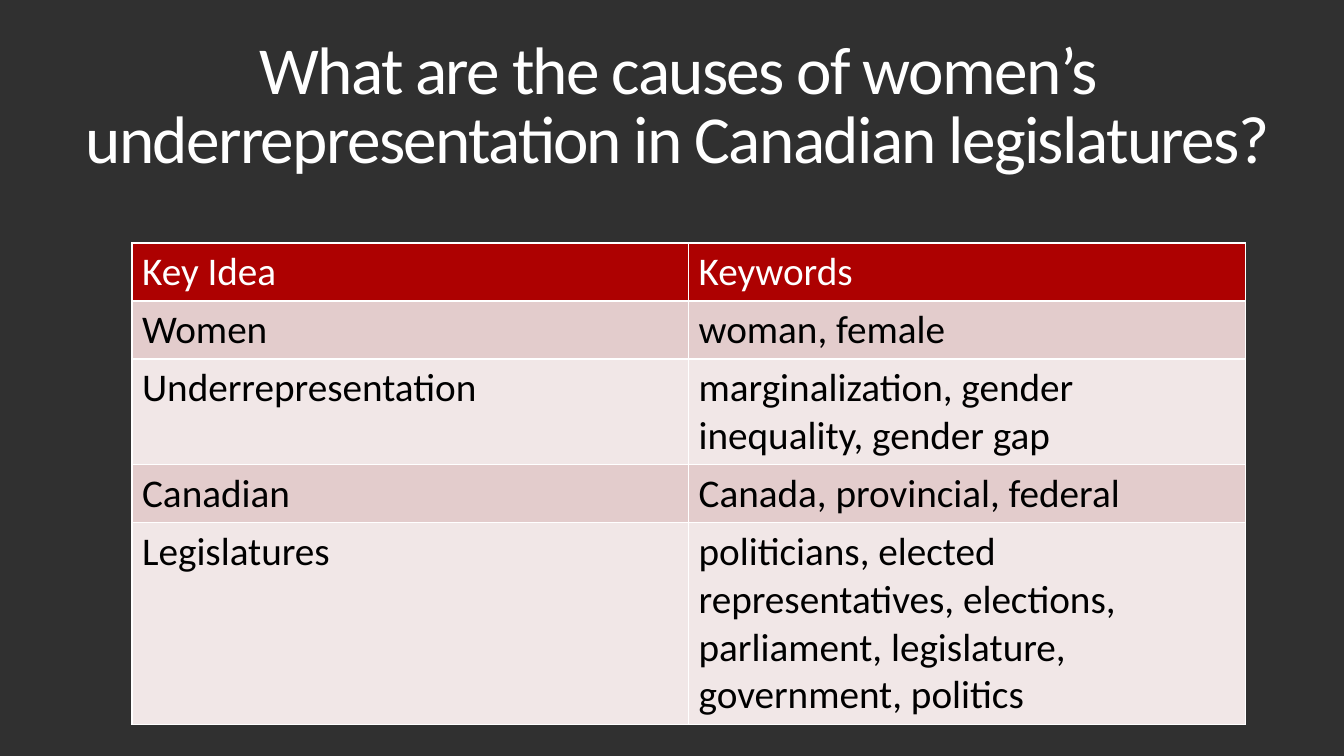
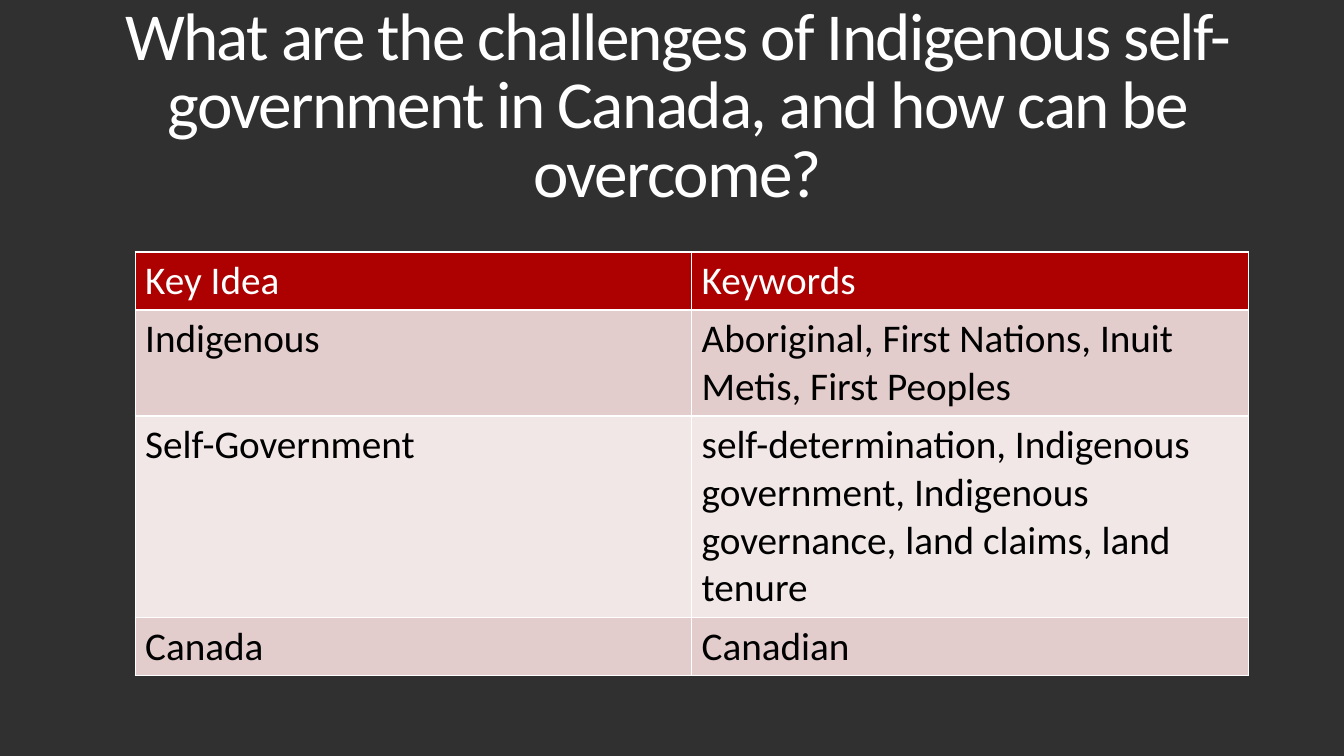
from lxml import etree
from pptx import Presentation
from pptx import util as u
from pptx.dml.color import RGBColor
from pptx.enum import text
from pptx.oxml import ns

BACKGROUND = RGBColor(0x30, 0x30, 0x30)
WHITE = RGBColor(0xFF, 0xFF, 0xFF)
BLACK = RGBColor(0x00, 0x00, 0x00)
RED = RGBColor(0xAD, 0x01, 0x01)
BANDS = (RGBColor(0xE3, 0xCC, 0xCC), RGBColor(0xF1, 0xE7, 0xE7))

FONT = "Calibri"
TITLE_SIZE, TITLE_SPACING = 48, -120
TABLE_SIZE = 28
COLUMN_WIDTH = u.Inches(5.52)
LINE_HEIGHT = u.Inches(0.47)
ROW_PADDING = u.Inches(0.1)
HEADER = ("Key Idea", "Keywords", 1)

TOPICS = (
    (
        "What are the causes of women’s underrepresentation in Canadian legislatures?",
        (1.31, 2.41),
        (
            ("Women", "woman, female", 1),
            ("Underrepresentation", "marginalization, gender inequality, gender gap", 2),
            ("Canadian", "Canada, provincial, federal", 1),
            (
                "Legislatures",
                "politicians, elected representatives, elections, parliament, "
                "legislature, government, politics",
                4,
            ),
        ),
    ),
    (
        "What are the challenges of Indigenous self-government in Canada, "
        "and how can be overcome?",
        (1.34, 2.5),
        (
            ("Indigenous", "Aboriginal, First Nations, Inuit Metis, First Peoples", 2),
            (
                "Self-Government",
                "self-determination, Indigenous government, Indigenous governance, "
                "land claims, land tenure",
                4,
            ),
            ("Canada", "Canadian", 1),
        ),
    ),
)


def add_span(para, words, size, color):
    span = para.add_run()
    span.text = words
    span.font.name = FONT
    span.font.size = u.Pt(size)
    span.font.bold = False
    span.font.color.rgb = color
    return span


def prepare_layout(deck):
    fill = deck.slide_master.background.fill
    fill.solid()
    fill.fore_color.rgb = BACKGROUND
    layout = deck.slide_layouts.get_by_name("Title Only")
    title = layout.placeholders[0]
    title.left, title.top = u.Inches(0.17), u.Inches(0.31)
    title.width, title.height = u.Inches(13.1), u.Inches(1.53)
    return layout


def write_title(page, words):
    frame = page.shapes.title.text_frame
    frame.word_wrap = True
    frame.auto_size = text.MSO_AUTO_SIZE.NONE
    frame.vertical_anchor = text.MSO_ANCHOR.MIDDLE
    para = frame.paragraphs[0]
    para.alignment = text.PP_ALIGN.CENTER
    para.line_spacing = 0.85
    span = add_span(para, words, TITLE_SIZE, WHITE)
    span.font._element.set("spc", str(TITLE_SPACING))


def add_borders(cell):
    properties = cell._tc.get_or_add_tcPr()
    for position, side in enumerate(("lnL", "lnR", "lnT", "lnB")):
        line = etree.Element(ns.qn(f"a:{side}"), w=str(u.Pt(1)))
        fill = etree.SubElement(line, ns.qn("a:solidFill"))
        etree.SubElement(fill, ns.qn("a:srgbClr"), val=str(WHITE))
        properties.insert(position, line)


def write_cell(cell, words, fill, color):
    cell.fill.solid()
    cell.fill.fore_color.rgb = fill
    add_span(cell.text_frame.paragraphs[0], words, TABLE_SIZE, color)
    add_borders(cell)


def add_keyword_table(page, corner, topics):
    rows = (HEADER, *topics)
    heights = [ROW_PADDING + lines * LINE_HEIGHT for *_, lines in rows]
    left, top = map(u.Inches, corner)
    table = page.shapes.add_table(
        len(rows), 2, left, top, 2 * COLUMN_WIDTH, sum(heights)
    ).table
    for column in table.columns:
        column.width = COLUMN_WIDTH
    for index, (*entries, _) in enumerate(rows):
        table.rows[index].height = heights[index]
        fill, color = (BANDS[(index - 1) % 2], BLACK) if index else (RED, WHITE)
        for cell, words in zip(table.rows[index].cells, entries):
            write_cell(cell, words, fill, color)


def main():
    deck = Presentation()
    deck.slide_width, deck.slide_height = u.Inches(13.33), u.Inches(7.5)
    layout = prepare_layout(deck)
    for question, corner, topics in TOPICS:
        page = deck.slides.add_slide(layout)
        write_title(page, question)
        add_keyword_table(page, corner, topics)
    deck.save("out.pptx")


if __name__ == "__main__":
    main()
